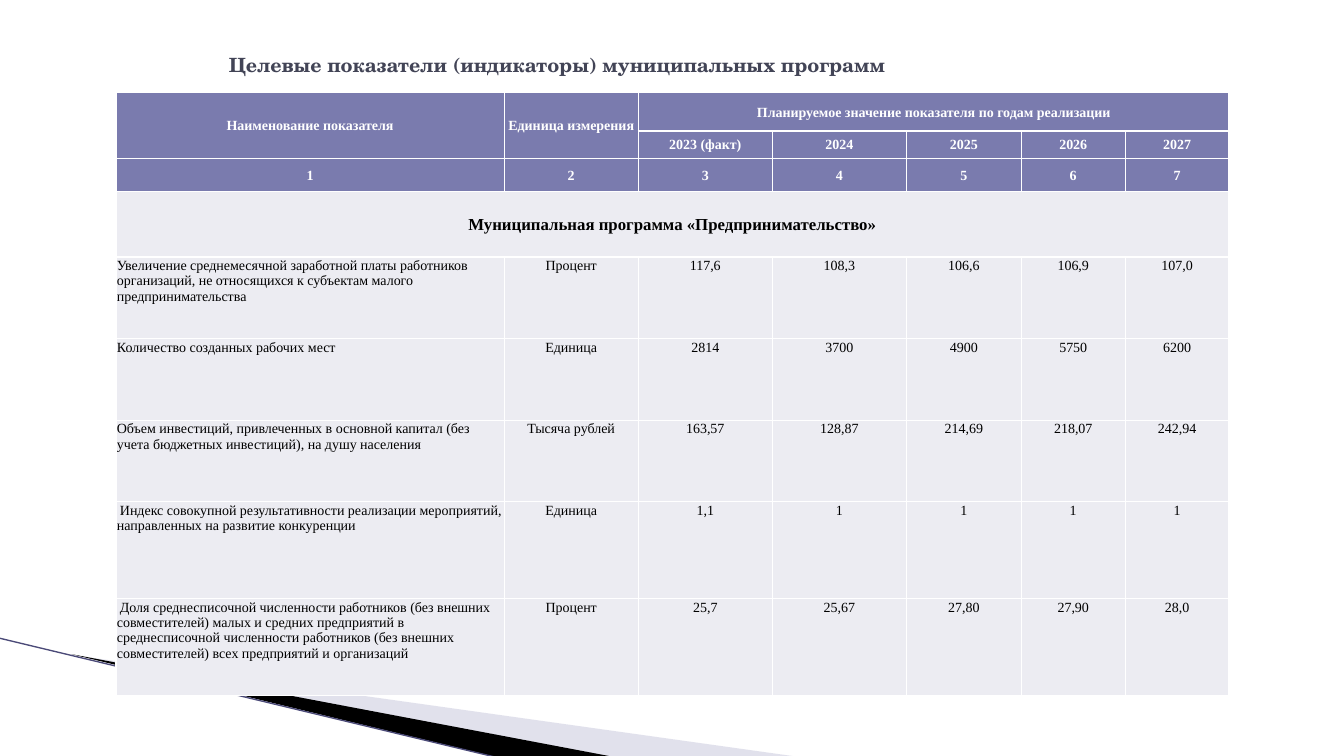
from dataclasses import dataclass

from lxml import etree
from pptx import Presentation
from pptx.dml.color import RGBColor
from pptx.enum import shapes as kinds, text
from pptx.oxml import ns
from pptx.util import Inches, Pt

COLOURS = {
    "title": "424456", "header": "7A7BAE", "body": "ECECF2", "white": "FFFFFF",
    "black": "000000", "wedge": "B6B6D1", "edge": "4B4A78",
}
TITLE_FONT, TABLE_FONT = "TeX Gyre Schola", "Times New Roman"
COLUMN_WIDTHS = [3.85, 1.33, 1.33, 1.33, 1.14, 1.03, 1.03]
ROW_HEIGHTS = [0.38, 0.27, 0.33, 0.65, 0.81, 0.81, 0.81, 0.96, 0.96]
YEARS = ["2023 (факт)", "2024", "2025", "2026", "2027"]


@dataclass
class Wedge:
    points: list[tuple[float, float]]
    colour: str
    opacity: int = 100


@dataclass
class CellStyle:
    fill: str
    colour: str
    size: int = 10
    bold: bool = False
    centred: bool = True
    middle: bool = False


@dataclass
class Indicator:
    label: str
    unit: str
    values: list[str]
    indent: float = 0


WEDGES = [
    Wedge([(0.73, 6.5), (7.93, 7.51), (6.08, 7.51)], "wedge", 40),
    Wedge([(0.71, 6.49), (6.09, 7.51), (4.96, 7.52)], "black"),
]
HEADER = CellStyle("header", "white", bold=True, middle=True)
PROGRAMME = CellStyle("body", "black", size=12, bold=True, middle=True)
LABEL = CellStyle("body", "black", centred=False)
VALUE = CellStyle("body", "black")
INDICATORS = [
    Indicator("Увеличение среднемесячной заработной платы работников организаций, "
              "не относящихся к субъектам малого предпринимательства",
              "Процент", ["117,6", "108,3", "106,6", "106,9", "107,0"]),
    Indicator("Количество созданных рабочих мест",
              "Единица", ["2814", "3700", "4900", "5750", "6200"]),
    Indicator("Объем инвестиций, привлеченных в основной капитал "
              "(без учета бюджетных инвестиций), на душу населения",
              "Тысяча рублей", ["163,57", "128,87", "214,69", "218,07", "242,94"]),
    Indicator("Индекс совокупной результативности реализации мероприятий, "
              "направленных на развитие конкуренции",
              "Единица", ["1,1", "1", "1", "1", "1"], 0.03),
    Indicator("Доля среднесписочной численности работников (без внешних совместителей) "
              "малых и средних предприятий в среднесписочной численности работников "
              "(без внешних совместителей) всех предприятий и организаций",
              "Процент", ["25,7", "25,67", "27,80", "27,90", "28,0"], 0.03),
]


def rgb(name: str) -> RGBColor:
    return RGBColor.from_string(COLOURS[name])


def draw_wedge(slide, wedge: Wedge) -> None:
    corners = [(Inches(x), Inches(y)) for x, y in wedge.points]
    builder = slide.shapes.build_freeform(*corners[0])
    builder.add_line_segments(corners[1:], close=True)
    shape = builder.convert_to_shape()
    shape.shadow.inherit = False
    shape.fill.solid()
    shape.fill.fore_color.rgb = rgb(wedge.colour)
    shape.line.fill.background()
    if wedge.opacity < 100:
        colour = shape.fill._xPr.find(".//" + ns.qn("a:srgbClr"))
        etree.SubElement(colour, ns.qn("a:alpha"), val=str(wedge.opacity * 1000))


def draw_edge(slide) -> None:
    edge = slide.shapes.add_connector(
        kinds.MSO_CONNECTOR.STRAIGHT, Inches(-0.01), Inches(6.33), Inches(4.95), Inches(7.52))
    edge.line.color.rgb = rgb("edge")
    edge.line.width = Pt(0.95)
    etree.SubElement(edge._element.spPr, ns.qn("a:effectLst"))


def write_title(slide) -> None:
    title = slide.shapes.title
    title.left, title.top = Inches(2.17), Inches(0.3)
    title.width, title.height = Inches(9), Inches(0.69)
    frame = title.text_frame
    frame.text = "Целевые показатели (индикаторы) муниципальных программ"
    frame.vertical_anchor = text.MSO_ANCHOR.MIDDLE
    frame.paragraphs[0].alignment = text.PP_ALIGN.LEFT
    font = frame.paragraphs[0].runs[0].font
    font.name, font.size, font.bold = TITLE_FONT, Pt(14), True
    font.color.rgb = rgb("title")


def format_cell(cell, style: CellStyle) -> None:
    """Give a cell its white borders, fill, margins and anchor."""
    properties = cell._tc.get_or_add_tcPr()
    for side in ("lnL", "lnR", "lnT", "lnB"):
        border = etree.SubElement(properties, ns.qn(f"a:{side}"), w=str(Pt(1)))
        fill = etree.SubElement(border, ns.qn("a:solidFill"))
        etree.SubElement(fill, ns.qn("a:srgbClr"), val=COLOURS["white"])
    cell.fill.solid()
    cell.fill.fore_color.rgb = rgb(style.fill)
    cell.margin_left = cell.margin_right = cell.margin_top = Inches(0.01)
    cell.margin_bottom = 0
    cell.vertical_anchor = text.MSO_ANCHOR.MIDDLE if style.middle else text.MSO_ANCHOR.TOP


def write_cell(cell, wording: str, style: CellStyle, indent: float = 0) -> None:
    format_cell(cell, style)
    if not wording:
        return
    paragraph = cell.text_frame.paragraphs[0]
    paragraph.text = wording
    paragraph.alignment = text.PP_ALIGN.CENTER if style.centred else text.PP_ALIGN.LEFT
    if indent:
        paragraph._p.get_or_add_pPr().set("indent", str(Inches(indent)))
    font = paragraph.runs[0].font
    font.name, font.size, font.bold = TABLE_FONT, Pt(style.size), style.bold
    font.color.rgb = rgb(style.colour)


def draw_table(slide) -> None:
    columns = len(COLUMN_WIDTHS)
    table = slide.shapes.add_table(
        len(ROW_HEIGHTS), columns, Inches(1.15), Inches(0.92),
        Inches(sum(COLUMN_WIDTHS)), Inches(sum(ROW_HEIGHTS))).table
    for column, width in zip(table.columns, COLUMN_WIDTHS):
        column.width = Inches(width)
    for row, height in zip(table.rows, ROW_HEIGHTS):
        row.height = Inches(height)

    # Header rows and the programme band
    header_rows = [
        ["Наименование показателя", "Единица измерения",
         "Планируемое значение показателя по годам реализации"] + [""] * 4,
        ["", ""] + YEARS,
        [str(number + 1) for number in range(columns)],
    ]
    programme_row = ["Муниципальная программа «Предпринимательство»"] + [""] * (columns - 1)
    styled_rows = [(row, HEADER) for row in header_rows] + [(programme_row, PROGRAMME)]
    for r, (wordings, style) in enumerate(styled_rows):
        for c, wording in enumerate(wordings):
            write_cell(table.cell(r, c), wording, style)
    for first, last in [((0, 0), (1, 0)), ((0, 1), (1, 1)), ((0, 2), (0, 6)), ((3, 0), (3, 6))]:
        table.cell(*first).merge(table.cell(*last))

    # Indicators by year
    for r, indicator in enumerate(INDICATORS, start=len(styled_rows)):
        write_cell(table.cell(r, 0), indicator.label, LABEL, indicator.indent)
        for c, wording in enumerate([indicator.unit, *indicator.values], start=1):
            write_cell(table.cell(r, c), wording, VALUE)


def main() -> None:
    deck = Presentation()
    deck.slide_width, deck.slide_height = Inches(13.33), Inches(7.5)
    slide = deck.slides.add_slide(deck.slide_layouts[5])
    # Corner decoration
    for wedge in WEDGES:
        draw_wedge(slide, wedge)
    draw_edge(slide)
    # Content
    write_title(slide)
    draw_table(slide)
    deck.save("out.pptx")


if __name__ == "__main__":
    main()
